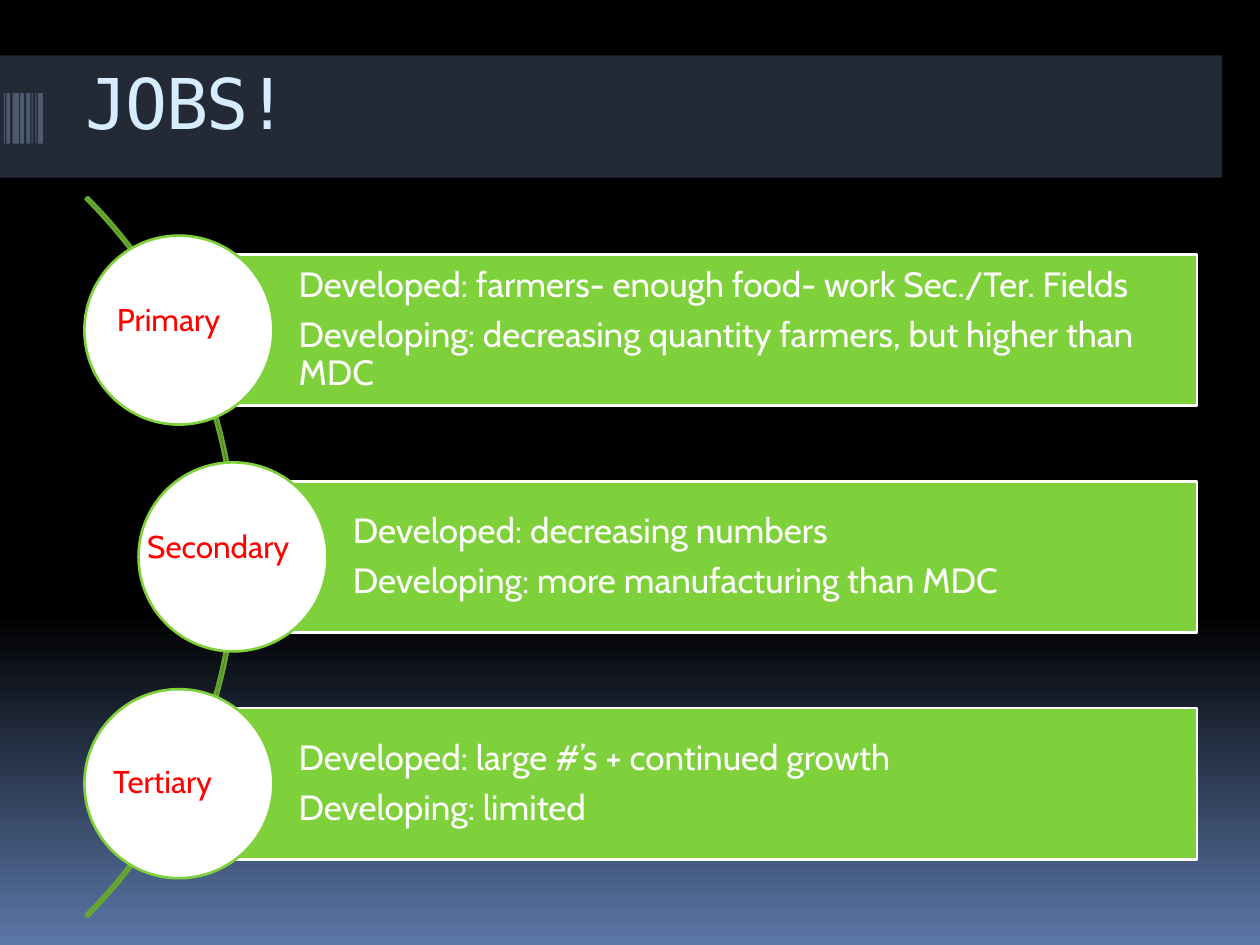
"""Build the JOBS! slide: three job sectors along an arc."""
from lxml.etree import SubElement
from pptx import Presentation
from pptx.dml.color import RGBColor
from pptx.enum.shapes import MSO_SHAPE
from pptx.enum.text import MSO_ANCHOR, PP_ALIGN
from pptx.oxml.ns import qn
from pptx.util import Inches, Pt

TITLE = "JOBS!"
SECTORS = [
    {"name": "Primary", "indent": 0, "label": (0.83, 2.33, 1.08, 0.71),
     "lines": ["Developed: farmers- enough food- work Sec./Ter. Fields",
               "Developing: decreasing quantity farmers, but higher than MDC"]},
    {"name": "Secondary", "indent": 0.43, "label": (1.07, 4.13, 1.41, 0.71),
     "lines": ["Developed: decreasing numbers",
               "Developing: more manufacturing than MDC"]},
    {"name": "Tertiary", "indent": 0, "label": (0.8, 6, 1.42, 0.4),
     "lines": ["Developed: large #’s + continued growth",
               "Developing: limited"]},
]
STRIPES = [(0.03, 0.01), (0.05, 0.03), (0.1, 0.05), (0.16, 0.03),
           (0.21, 0.03), (0.25, 0.01), (0.28, 0.01), (0.3, 0.04)]
BODY_FONT, TITLE_FONT = "Cabin", "DejaVu Sans Mono"
GREEN, DARK_GREEN, WHITE, RED = "7FD13B", "66A72F", "FFFFFF", "FF0000"
BAR_LEFT, BAR_RIGHT, BAR_HEIGHT = 1.42, 9.5, 1.2
FIRST_MIDDLE, ROW_PITCH, CIRCLE = 2.62, 1.8, 1.5
ARC_LEFT, ARC_SIZE = -6.2, 8.08


def rgb(value):
    return RGBColor.from_string(value)


def add_shape(s, kind, box, fill=None, line=None):
    sp = s.shapes.add_shape(kind, *map(Inches, box))
    sp.shadow.inherit = False
    if fill:
        sp.fill.solid()
        sp.fill.fore_color.rgb = rgb(fill)
    else:
        sp.fill.background()
    if line:
        sp.line.color.rgb = rgb(line)
        sp.line.width = Pt(1.5)
    else:
        sp.line.fill.background()
    return sp


def write(sp, lines, size, font, color):
    tf = sp.text_frame
    tf.word_wrap = True
    tf.text = "\n".join(lines)
    for p in tf.paragraphs:
        p.alignment = PP_ALIGN.LEFT
        for r in p.runs:
            r.font.size, r.font.name = Pt(size), font
            r.font.color.rgb = rgb(color)
    return tf


def add_text(s, box, text, size, font, color):
    return write(s.shapes.add_textbox(*map(Inches, box)), [text], size, font, color)


def add_background(s):
    fill = s.background.fill
    fill.gradient()
    fill.gradient_angle = 270
    for stop, (position, color) in zip(fill.gradient_stops,
                                       [(0.65, "000000"), (1, "5B77A8")]):
        stop.position = position
        stop.color.rgb = rgb(color)


def add_header(s):
    band = add_shape(s, MSO_SHAPE.RECTANGLE, (0, 0.44, 9.7, 0.97), "586A86")
    color = band.fill._xPr.find(".//" + qn("a:srgbClr"))
    SubElement(color, qn("a:alpha")).set("val", "40000")
    for left, width in STRIPES:
        add_shape(s, MSO_SHAPE.RECTANGLE, (left, 0.74, width, 0.4), "4E5B6F")
    tf = add_text(s, (0.58, 0.42, 9, 1.25), TITLE, 40, TITLE_FONT, "D6ECFF")
    tf.paragraphs[0].runs[0].font._element.set("spc", "-100")


def add_sector(s, row, sector):
    left = BAR_LEFT + sector["indent"]
    middle = FIRST_MIDDLE + row * ROW_PITCH
    bar = add_shape(s, MSO_SHAPE.RECTANGLE,
                    (left, middle - BAR_HEIGHT / 2, BAR_RIGHT - left, BAR_HEIGHT),
                    GREEN, WHITE)
    tf = write(bar, sector["lines"], 20, BODY_FONT, WHITE)
    tf.vertical_anchor = MSO_ANCHOR.MIDDLE
    tf.margin_left = Inches(0.95)
    tf.margin_top = tf.margin_right = tf.margin_bottom = Inches(0.06)
    for p in tf.paragraphs:
        p.line_spacing, p.space_after = 0.9, Pt(7)
    add_shape(s, MSO_SHAPE.OVAL,
              (left - CIRCLE / 2, middle - CIRCLE / 2, CIRCLE, CIRCLE), WHITE, GREEN)


def main():
    prs = Presentation()
    prs.slide_width, prs.slide_height = Inches(10), Inches(7.5)
    s = prs.slides.add_slide(prs.slide_layouts[6])
    add_background(s)
    add_header(s)
    arc_top = FIRST_MIDDLE + ROW_PITCH - ARC_SIZE / 2
    arc = add_shape(s, MSO_SHAPE.BLOCK_ARC,
                    (ARC_LEFT, arc_top, ARC_SIZE, ARC_SIZE), line=DARK_GREEN)
    for i, value in enumerate((189, 27, 0.003)):
        arc.adjustments[i] = value
    for row, sector in enumerate(SECTORS):
        add_sector(s, row, sector)
    for sector in SECTORS:
        add_text(s, sector["label"], sector["name"], 18, BODY_FONT, RED)
    prs.save("out.pptx")


if __name__ == "__main__":
    main()
